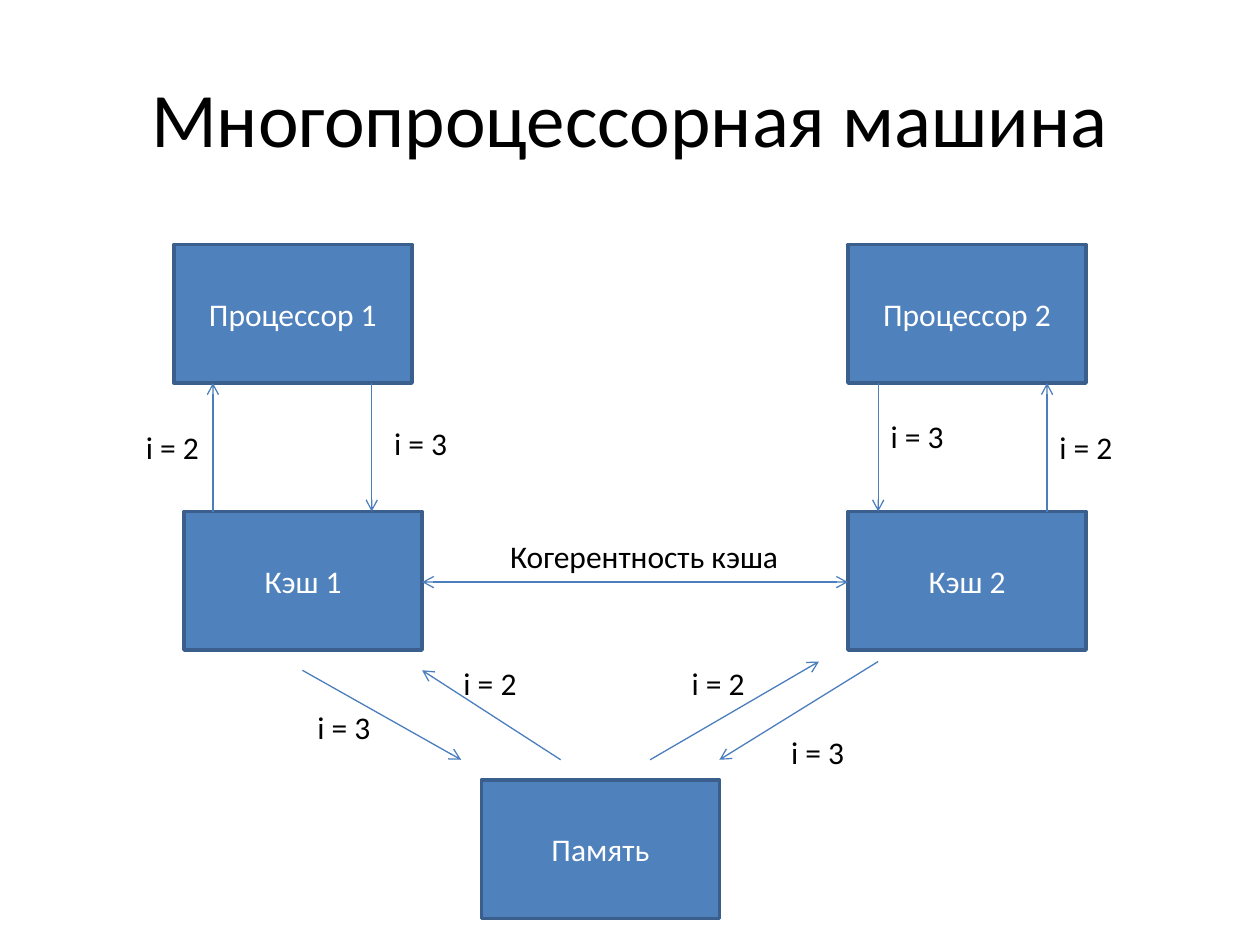
import pptx
import pptx.util
import pptx.dml.color
import pptx.enum.shapes
import pptx.enum.text
import lxml.etree
import pptx.oxml.ns

RGBColor = pptx.dml.color.RGBColor
BLACK = RGBColor(0x00, 0x00, 0x00)
WHITE = RGBColor(0xFF, 0xFF, 0xFF)
BLOCK_FILL = RGBColor(0x4F, 0x81, 0xBD)
BLOCK_LINE = RGBColor(0x3A, 0x5F, 0x8C)
ARROW_LINE = RGBColor(0x4B, 0x7E, 0xBC)

ALIGN = pptx.enum.text.PP_ALIGN
ANCHOR = pptx.enum.text.MSO_ANCHOR

deck = pptx.Presentation()
deck.slide_width = pptx.util.Inches(10)
deck.slide_height = pptx.util.Inches(7.5)
page = deck.slides.add_slide(deck.slide_layouts[5])

# Grid of 10 columns by 7.5 rows
COLUMN = deck.slide_width / 10
ROW = deck.slide_height / 7.5


def grid(*numbers):
    """Turn alternating column and row numbers into slide lengths."""
    return [round(number * (ROW if index % 2 else COLUMN))
            for index, number in enumerate(numbers)]


def write(box, text, size=18, color=BLACK, align=ALIGN.LEFT,
          anchor=ANCHOR.TOP, wrap=True):
    frame = box.text_frame
    frame.word_wrap = wrap
    frame.vertical_anchor = anchor
    para = frame.paragraphs[0]
    para.alignment = align
    span = para.add_run()
    span.text = text
    span.font.name = "Calibri"
    span.font.size = pptx.util.Pt(size)
    span.font.color.rgb = color


# Title
title = page.shapes.title
title.left, title.top, title.width, title.height = grid(0.5, 0.3, 9, 1.25)
write(title, "Многопроцессорная машина", size=44,
      align=ALIGN.CENTER, anchor=ANCHOR.MIDDLE)

# Processors, caches and memory
BLOCK_WIDTH, BLOCK_HEIGHT = 1.89, 1.1
CPU_TOP, CACHE_TOP, MEMORY_TOP = 1.94, 4.06, 6.19
RIGHT_LEFT = 6.73
CACHE_LEFT = 1.46
blocks = [
    ("Процессор 1", 1.38, CPU_TOP),
    ("Процессор 2", RIGHT_LEFT, CPU_TOP),
    ("Память", 3.82, MEMORY_TOP),
    ("Кэш 1", CACHE_LEFT, CACHE_TOP),
    ("Кэш 2", RIGHT_LEFT, CACHE_TOP),
]
for name, left, top in blocks:
    block = page.shapes.add_shape(
        pptx.enum.shapes.MSO_SHAPE.RECTANGLE,
        *grid(left, top, BLOCK_WIDTH, BLOCK_HEIGHT))
    block.shadow.inherit = False
    block.fill.solid()
    block.fill.fore_color.rgb = BLOCK_FILL
    block.line.color.rgb = BLOCK_LINE
    block.line.width = pptx.util.Pt(2)
    write(block, name, color=WHITE, align=ALIGN.CENTER, anchor=ANCHOR.MIDDLE)

# Arrows: start, end, and which ends carry a head
CPU_BOTTOM = CPU_TOP + BLOCK_HEIGHT
CACHE_MIDDLE = 4.62
MEMORY_EDGE = 6.03
ONE_WAY, TWO_WAY = ["tailEnd"], ["headEnd", "tailEnd"]
arrows = [
    # Reads: memory to cache, cache to processor
    (4.45, MEMORY_EDGE, 3.35, 5.32, ONE_WAY),
    (5.16, MEMORY_EDGE, 6.5, 5.25, ONE_WAY),
    (1.69, CACHE_TOP, 1.69, CPU_BOTTOM, ONE_WAY),
    (8.31, CACHE_TOP, 8.31, CPU_BOTTOM, ONE_WAY),
    # Writes: processor to cache, cache to memory
    (2.95, CPU_BOTTOM, 2.95, CACHE_TOP, ONE_WAY),
    (6.97, CPU_BOTTOM, 6.97, CACHE_TOP, ONE_WAY),
    (6.97, 5.25, 5.71, MEMORY_EDGE, ONE_WAY),
    (2.4, 5.32, 3.66, MEMORY_EDGE, ONE_WAY),
    # Coherence between the caches
    (CACHE_LEFT + BLOCK_WIDTH, CACHE_MIDDLE, RIGHT_LEFT, CACHE_MIDDLE, TWO_WAY),
]
for *ends, heads in arrows:
    arrow = page.shapes.add_connector(
        pptx.enum.shapes.MSO_CONNECTOR.STRAIGHT, *grid(*ends))
    arrow.line.color.rgb = ARROW_LINE
    arrow.line.width = pptx.util.Pt(0.75)
    properties = arrow.element.spPr
    outline = properties.find(pptx.oxml.ns.qn("a:ln"))
    for head in heads:
        lxml.etree.SubElement(outline, pptx.oxml.ns.qn("a:" + head), type="arrow")
    lxml.etree.SubElement(properties, pptx.oxml.ns.qn("a:effectLst"))

# Labels beside the arrows
LABEL_WIDTH, LABEL_HEIGHT = 0.63, 0.4
labels = [
    ("i = 2", 5.39, 5.22, LABEL_WIDTH),
    ("i = 2", 3.58, 5.22, LABEL_WIDTH),
    ("i = 2", 1.06, 3.35, LABEL_WIDTH),
    ("i = 2", 8.31, 3.35, LABEL_WIDTH),
    ("i = 3", 3.03, 3.32, LABEL_WIDTH),
    ("i = 3", 6.97, 3.26, LABEL_WIDTH),
    ("i = 3", 6.18, 5.77, LABEL_WIDTH),
    ("i = 3", 2.42, 5.57, LABEL_WIDTH),
    ("Когерентность кэша", 3.95, 4.21, 2.36),
]
for text, left, top, width in labels:
    label = page.shapes.add_textbox(*grid(left, top, width, LABEL_HEIGHT))
    label.text_frame.auto_size = pptx.enum.text.MSO_AUTO_SIZE.SHAPE_TO_FIT_TEXT
    write(label, text, wrap=False)

deck.save("out.pptx")
